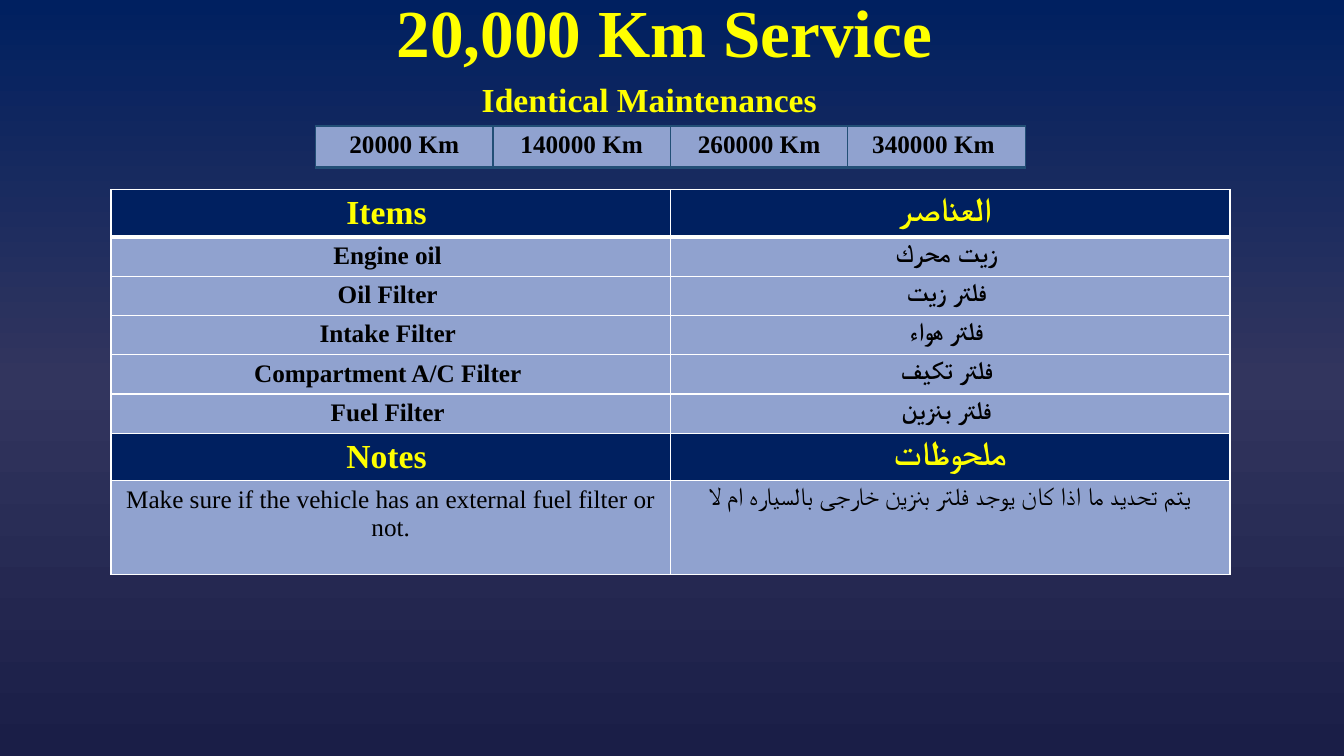
from copy import deepcopy
from dataclasses import dataclass

from lxml import etree
from pptx import Presentation
from pptx.dml.color import RGBColor
from pptx.enum.text import MSO_ANCHOR, PP_ALIGN
from pptx.oxml.ns import qn
from pptx.util import Inches, Pt

CENTER = PP_ALIGN.CENTER
MIDDLE = MSO_ANCHOR.MIDDLE
TITLE_ONLY = 5


@dataclass(frozen=True)
class Theme:
    """Colours, font and type sizes of the slide."""
    font: str = "Times New Roman"
    navy: str = "002060"
    yellow: str = "FFFF00"
    black: str = "000000"
    white: str = "FFFFFF"
    panel: str = "90A2CF"
    outline: str = "224F76"
    background: tuple = ((0, "002060"), (0.5, "32355E"), (1, "1A1E47"))
    title_size: int = 48
    heading_size: int = 24
    body_size: int = 18


THEME = Theme()
HEADING = {"size": Pt(THEME.heading_size), "bold": True, "color": THEME.yellow}
TITLE = {**HEADING, "size": Pt(THEME.title_size)}
ITEM = {"size": Pt(THEME.body_size), "bold": True, "color": THEME.black}
NOTE = {**ITEM, "bold": False}

DISTANCES = ["20000 Km", "140000 Km", "260000 Km", "340000 Km "]
SERVICE_ROWS = [
    ("heading", "Items ", "العناصر "),
    ("item", "Engine oil ", "زيت محرك "),
    ("item", "Oil Filter ", "فلتر زيت "),
    ("item", "Intake Filter ", "فلتر هواء "),
    ("item", "Compartment A/C Filter ", "فلتر تكيف "),
    ("item", "Fuel Filter ", "فلتر بنزين "),
    ("heading", "Notes ", "ملحوظات"),
    ("note", "Make sure if the vehicle has an external fuel filter or not.",
     "يتم تحديد ما اذا كان يوجد فلتر بنزين خارجى بالسياره ام لا"),
]
ROW_STYLES = {
    "heading": (HEADING, THEME.navy, 0.47),
    "item": (ITEM, THEME.panel, 0.39),
    "note": (NOTE, THEME.panel, 0.93),
}


def write_text(text_frame, text, style):
    """Write one centred paragraph in the given style."""
    paragraph = text_frame.paragraphs[0]
    paragraph.alignment = CENTER
    run = paragraph.add_run()
    run.text = text
    run.font.name = THEME.font
    for name, value in style.items():
        if name == "color":
            run.font.color.rgb = RGBColor.from_string(value)
        else:
            setattr(run.font, name, value)
    return paragraph


def paint_background(slide):
    """Fill the background with a vertical three-stop gradient."""
    fill = slide.background.fill
    fill.gradient()
    fill.gradient_angle = 270
    stop_list = slide.element.find(".//" + qn("a:gsLst"))
    stop_list.append(deepcopy(stop_list[-1]))
    for stop, (position, color) in zip(fill.gradient_stops, THEME.background):
        stop.position = position
        stop.color.rgb = RGBColor.from_string(color)


def add_title(slide, text):
    """Place and format the title placeholder."""
    title = slide.shapes.title
    title.left, title.top = Inches(0.84), Inches(0.1)
    title.width, title.height = Inches(11.5), Inches(0.51)
    title.text_frame.vertical_anchor = MIDDLE
    write_text(title.text_frame, text, TITLE).line_spacing = 0.9


def add_subtitle(slide, text):
    """Add the line under the title."""
    box = slide.shapes.add_textbox(Inches(3.71), Inches(0.73), Inches(5.46), Inches(0.5))
    box.text_frame.word_wrap = True
    write_text(box.text_frame, text, HEADING)


def set_borders(cell, color, widths):
    """Draw cell borders from a dict of side letters and point widths."""
    properties = cell._tc.get_or_add_tcPr()
    for side in "LRTB":
        line = etree.SubElement(properties, qn("a:ln" + side), w=str(Pt(widths[side])))
        fill = etree.SubElement(line, qn("a:solidFill"))
        etree.SubElement(fill, qn("a:srgbClr"), val=color)


def format_cell(cell, text, style, fill, border, widths):
    """Set the borders, fill and text of a cell."""
    set_borders(cell, border, widths)
    cell.fill.solid()
    cell.fill.fore_color.rgb = RGBColor.from_string(fill)
    write_text(cell.text_frame, text, style)


def add_plain_table(slide, left, top, column_width, columns, heights):
    """Add a table with equal columns and no banding."""
    frame = slide.shapes.add_table(
        len(heights), columns, Inches(left), Inches(top),
        Inches(column_width * columns), Inches(sum(heights)))
    table = frame.table
    table.first_row = table.horz_banding = False
    for column in table.columns:
        column.width = Inches(column_width)
    for row, height in zip(table.rows, heights):
        row.height = Inches(height)
    return table


def add_distance_table(slide):
    """Add the strip of distances that share this service."""
    table = add_plain_table(slide, 3.13, 1.25, 1.76, len(DISTANCES), [0.41])
    widths = {"L": 1, "R": 1, "T": 1, "B": 2}
    for cell, distance in zip(table.rows[0].cells, DISTANCES):
        format_cell(cell, distance, ITEM, THEME.panel, THEME.outline, widths)


def add_service_table(slide):
    """Add the bilingual table of items and notes."""
    heights = [ROW_STYLES[kind][2] for kind, *_ in SERVICE_ROWS]
    table = add_plain_table(slide, 1.1, 1.88, 5.55, 2, heights)
    for index, (kind, *texts) in enumerate(SERVICE_ROWS):
        style, fill, _ = ROW_STYLES[kind]
        widths = {"L": 1, "R": 1, "T": 3 if index == 1 else 1, "B": 3 if index == 0 else 1}
        for cell, text in zip(table.rows[index].cells, texts):
            format_cell(cell, text, style, fill, THEME.white, widths)


def main():
    """Build the slide and save it."""
    presentation = Presentation()
    presentation.slide_width = Inches(13.33)
    presentation.slide_height = Inches(7.5)
    slide = presentation.slides.add_slide(presentation.slide_layouts[TITLE_ONLY])
    paint_background(slide)
    add_title(slide, "20,000 Km Service")
    add_distance_table(slide)
    add_service_table(slide)
    add_subtitle(slide, "Identical Maintenances")
    presentation.save("out.pptx")


if __name__ == "__main__":
    main()
